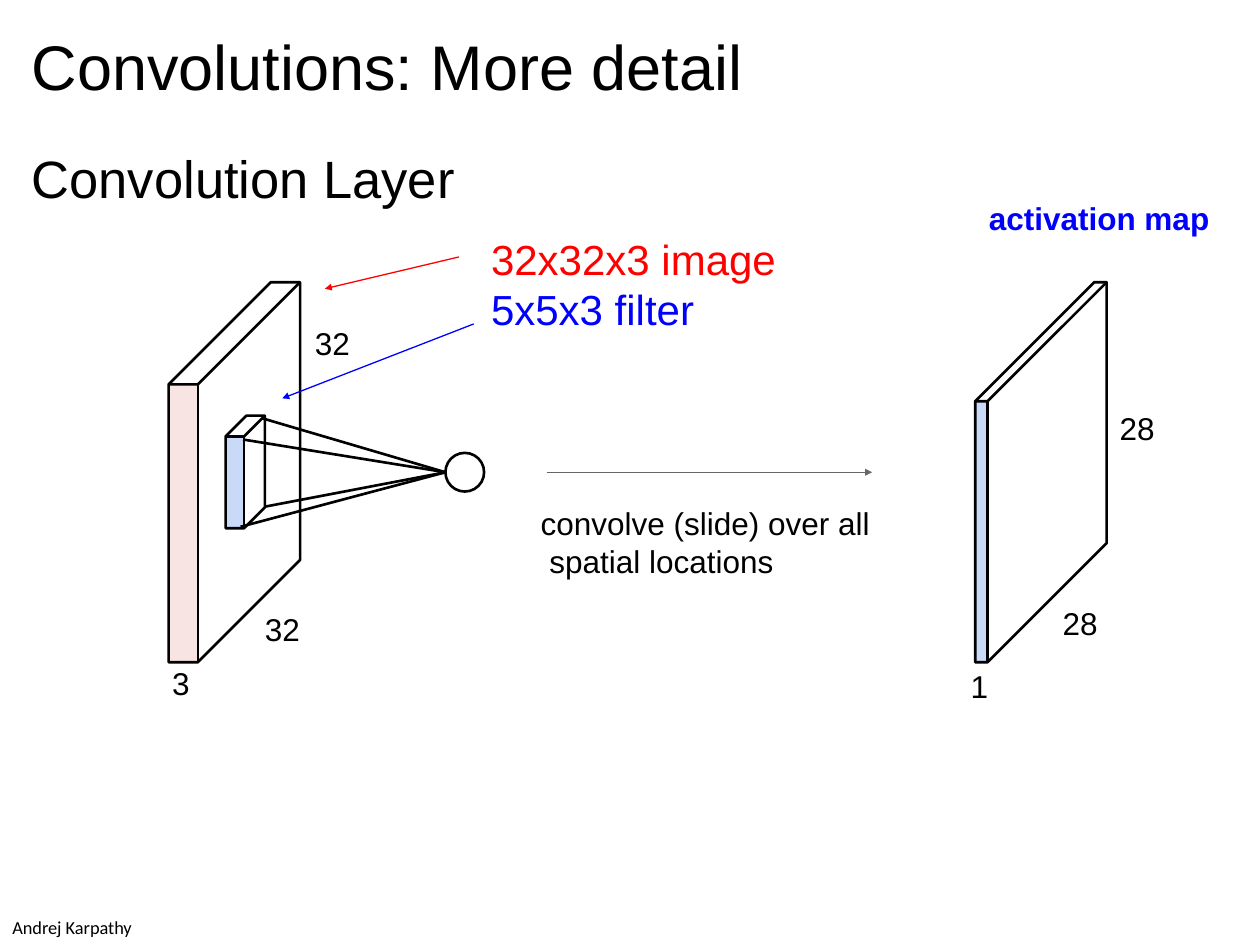
from lxml.etree import SubElement
from pptx import Presentation
from pptx.dml.color import RGBColor
from pptx.enum.shapes import MSO_CONNECTOR, MSO_SHAPE
from pptx.enum.text import MSO_ANCHOR, PP_ALIGN
from pptx.oxml.ns import qn
from pptx.util import Cm, Pt

COLORS = {
    "black": "000000",
    "red": "FF0000",
    "blue": "0000FF",
    "grey": "666666",
    "pink face": "F4CCCC",
    "blue face": "C8DAF7",
}


def color(name):
    return RGBColor.from_string(COLORS[name])


def add_outline(slide, kind, left, top, width, height):
    """Add an unfilled preset shape with a black outline."""
    shape = slide.shapes.add_shape(kind, Cm(left), Cm(top), Cm(width), Cm(height))
    shape.shadow.inherit = False
    shape.fill.background()
    shape.line.color.rgb = color("black")
    shape.line.width = Pt(1.5)
    return shape


def add_volume(slide, left, top, width, height, depth, face_color, opacity=100):
    """Draw a cuboid whose front face alone is coloured."""
    face = slide.shapes.add_shape(
        MSO_SHAPE.RECTANGLE,
        Cm(left), Cm(top + depth), Cm(width - depth), Cm(height - depth),
    )
    face.shadow.inherit = False
    face.fill.solid()
    face.fill.fore_color.rgb = color(face_color)
    face.line.fill.background()
    if opacity < 100:
        rgb = face._element.spPr.find(f".//{qn('a:srgbClr')}")
        SubElement(rgb, qn("a:alpha"), val=str(opacity * 1000))
    cube = add_outline(slide, MSO_SHAPE.CUBE, left, top, width, height)
    cube.adjustments[0] = depth / min(width, height)


def add_line(slide, start, end, line_color="black", width=1.5, arrow=False):
    connector = slide.shapes.add_connector(
        MSO_CONNECTOR.STRAIGHT, *(Cm(value) for value in (*start, *end))
    )
    connector.line.color.rgb = color(line_color)
    connector.line.width = Pt(width)
    properties = connector._element.spPr
    if arrow:
        SubElement(properties.find(qn("a:ln")), qn("a:tailEnd"),
                   type="triangle", w="sm", len="sm")
    SubElement(properties, qn("a:effectLst"))


def add_text(slide, left, top, width, height, lines, size=18, font="Arial",
             bold=False, align=PP_ALIGN.LEFT, spacing=None):
    """Add a paragraph for each (text, color) pair; a newline breaks its line."""
    box = slide.shapes.add_textbox(Cm(left), Cm(top), Cm(width), Cm(height))
    frame = box.text_frame
    frame.word_wrap = True
    frame.vertical_anchor = MSO_ANCHOR.TOP
    frame.margin_left = frame.margin_right = 0
    frame.margin_top = frame.margin_bottom = 0
    for index, (text, text_color) in enumerate(lines):
        paragraph = frame.add_paragraph() if index else frame.paragraphs[0]
        paragraph.alignment = align
        paragraph.line_spacing = spacing
        for part_index, part in enumerate(text.split("\n")):
            if part_index:
                paragraph.add_line_break()
            run = paragraph.add_run()
            run.text = part
            run.font.size = Pt(size)
            run.font.name = font
            run.font.bold = bold
            run.font.color.rgb = color(text_color)


def add_input(slide):
    """Draw the image, the filter on it and the neuron it feeds."""
    add_volume(slide, 3.4, 5.69, 2.65, 7.66, 2.06, "pink face", opacity=52)
    add_volume(slide, 4.55, 8.38, 0.79, 2.27, 0.42, "blue face")
    add_outline(slide, MSO_SHAPE.OVAL, 8.98, 9.13, 0.78, 0.78)
    for corner in ((4.85, 10.62), (4.9, 8.86), (5.28, 8.43), (5.36, 10.21)):
        add_line(slide, corner, (8.98, 9.52))


def add_arrows(slide):
    for start, end, arrow_color in (
        ((9.25, 5.18), (6.55, 5.82), "red"),
        ((9.55, 6.53), (5.69, 8.03), "blue"),
        ((11.02, 9.52), (17.58, 9.52), "grey"),
    ):
        add_line(slide, start, end, arrow_color, width=0.75, arrow=True)


def add_dimensions(slide):
    for text, left, top in (
        ("32", 6.35, 6.53), ("32", 5.34, 12.3), ("3", 3.47, 13.38),
        ("28", 22.57, 8.25), ("28", 21.42, 12.17), ("1", 19.57, 13.44),
    ):
        add_text(slide, left, top, 0.8, 0.79, [(text, "black")])


def main():
    presentation = Presentation()
    presentation.slide_width = Cm(25.4)
    presentation.slide_height = Cm(19.05)
    slide = presentation.slides.add_slide(presentation.slide_layouts[6])

    add_text(slide, 0.64, 0.56, 24.16, 1.55,
             [("Convolutions: More detail", "black")], size=36)
    add_text(slide, 0.64, 2.95, 24.16, 1.27,
             [("Convolution Layer", "black")], size=30)
    add_input(slide)
    add_volume(slide, 19.66, 5.69, 2.65, 7.66, 2.4, "blue face")
    add_arrows(slide)
    add_dimensions(slide)
    add_text(slide, 18.4, 4.02, 5.98, 0.72, [("activation map", "blue")],
             bold=True, align=PP_ALIGN.RIGHT)
    add_text(slide, 9.9, 4.72, 7, 2,
             [("32x32x3 image", "red"), ("5x5x3 filter", "blue")],
             size=24, spacing=Pt(28.5))
    add_text(slide, 10.9, 10.16, 7.5, 1.5,
             [("convolve (slide) over all\n spatial locations", "black")])
    add_text(slide, 0.25, 18.47, 2.8, 0.45, [("Andrej Karpathy", "black")],
             size=10.5, font="Calibri")

    presentation.save("out.pptx")


if __name__ == "__main__":
    main()
